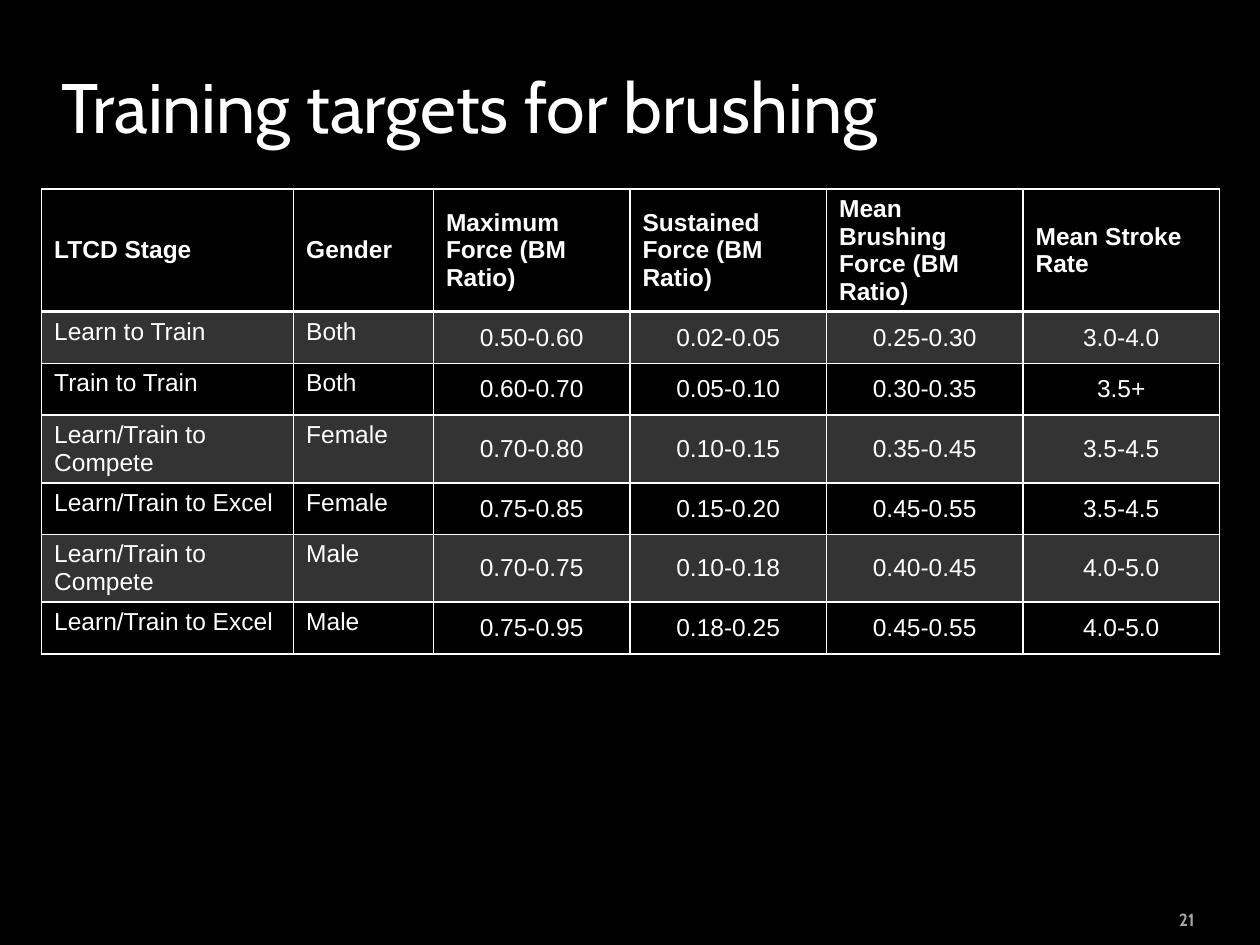
from lxml import etree
from pptx import Presentation
from pptx.dml.color import RGBColor
from pptx.enum import text
from pptx.oxml.ns import qn
from pptx.util import Inches, Pt

COLORS = {"back": "000000", "ink": "FFFFFF", "number": "A6A6A6"}
COLUMN_WIDTHS = [2, 1.11] + [1.56] * 4
ROW_HEIGHT = 0.41
BAND_ALPHA = 20
TARGETS = [
    ["LTCD Stage", "Gender", "Maximum Force (BM Ratio)", "Sustained Force (BM Ratio)",
     "Mean Brushing Force (BM Ratio)", "Mean Stroke Rate"],
    ["Learn to Train", "Both", "0.50-0.60", "0.02-0.05", "0.25-0.30", "3.0-4.0"],
    ["Train to Train", "Both", "0.60-0.70", "0.05-0.10", "0.30-0.35", "3.5+"],
    ["Learn/Train to Compete", "Female", "0.70-0.80", "0.10-0.15", "0.35-0.45", "3.5-4.5"],
    ["Learn/Train to Excel", "Female", "0.75-0.85", "0.15-0.20", "0.45-0.55", "3.5-4.5"],
    ["Learn/Train to Compete", "Male", "0.70-0.75", "0.10-0.18", "0.40-0.45", "4.0-5.0"],
    ["Learn/Train to Excel", "Male", "0.75-0.95", "0.18-0.25", "0.45-0.55", "4.0-5.0"],
]


class Deck:
    """Holds the style and the current slide."""

    def __init__(self, width, height):
        self.show = Presentation()
        self.show.slide_width, self.show.slide_height = Inches(width), Inches(height)
        self.slide = self.show.slides.add_slide(self.show.slide_layouts[6])
        self.paint(self.slide.background.fill, "back")

    def paint(self, fill, color):
        fill.solid()
        fill.fore_color.rgb = RGBColor.from_string(COLORS[color])

    def style(self, frame, size, font, color="ink", bold=False, align=text.PP_ALIGN.LEFT):
        for paragraph in frame.paragraphs:
            paragraph.alignment = align
            for run in paragraph.runs:
                run.font.size, run.font.name, run.font.bold = Pt(size), font, bold
                run.font.color.rgb = RGBColor.from_string(COLORS[color])

    def label(self, words, left, top, width, height, size, **look):
        place = [Inches(n) for n in (left, top, width, height)]
        frame = self.slide.shapes.add_textbox(*place).text_frame
        frame.word_wrap = True
        frame.vertical_anchor = text.MSO_ANCHOR.MIDDLE
        frame.text = words
        self.style(frame, size, "Cabin", **look)

    def borders(self, cell, widths):
        properties = cell._tc.get_or_add_tcPr()
        for position, (side, width) in enumerate(widths.items()):
            line = etree.Element(qn(f"a:ln{side}"), w=str(Pt(width)))
            ink = etree.SubElement(line, qn("a:solidFill"))
            etree.SubElement(ink, qn("a:srgbClr"), val=COLORS["ink"])
            properties.insert(position, line)

    def band(self, cell):
        self.paint(cell.fill, "ink")
        tint = cell._tc.tcPr.find(f".//{qn('a:srgbClr')}")
        etree.SubElement(tint, qn("a:alpha"), val=str(BAND_ALPHA * 1000))

    def table(self, rows, left, top, widths, row_height):
        grid = self.slide.shapes.add_table(
            len(rows), len(widths), Inches(left), Inches(top),
            Inches(sum(widths)), Inches(row_height * len(rows))).table
        for column, width in zip(grid.columns, widths):
            column.width = Inches(width)
        for r, row in enumerate(rows):
            grid.rows[r].height = Inches(row_height)
            for c, words in enumerate(row):
                cell = grid.cell(r, c)
                header, figure = r == 0, r > 0 and c > 1
                cell.text = words
                cell.vertical_anchor = (text.MSO_ANCHOR.MIDDLE if header or figure
                                        else text.MSO_ANCHOR.TOP)
                align = text.PP_ALIGN.CENTER if figure else text.PP_ALIGN.LEFT
                self.style(cell.text_frame, 14, "Arial", bold=header, align=align)
                if r % 2:
                    self.band(cell)
                else:
                    cell.fill.background()
                self.borders(cell, {"L": 1, "R": 1, "T": 2 if r == 1 else 1,
                                    "B": 2 if header else 1})


def main():
    deck = Deck(10, 7.5)
    deck.table(TARGETS, 0.33, 1.5, COLUMN_WIDTHS, ROW_HEIGHT)
    deck.label("21", 8.62, 7.16, 0.96, 0.27, 10, color="number", bold=True,
               align=text.PP_ALIGN.RIGHT)
    deck.label("Training targets for brushing", 0.39, 0.25, 9.34, 1.17, 40)
    deck.show.save("out.pptx")


if __name__ == "__main__":
    main()
